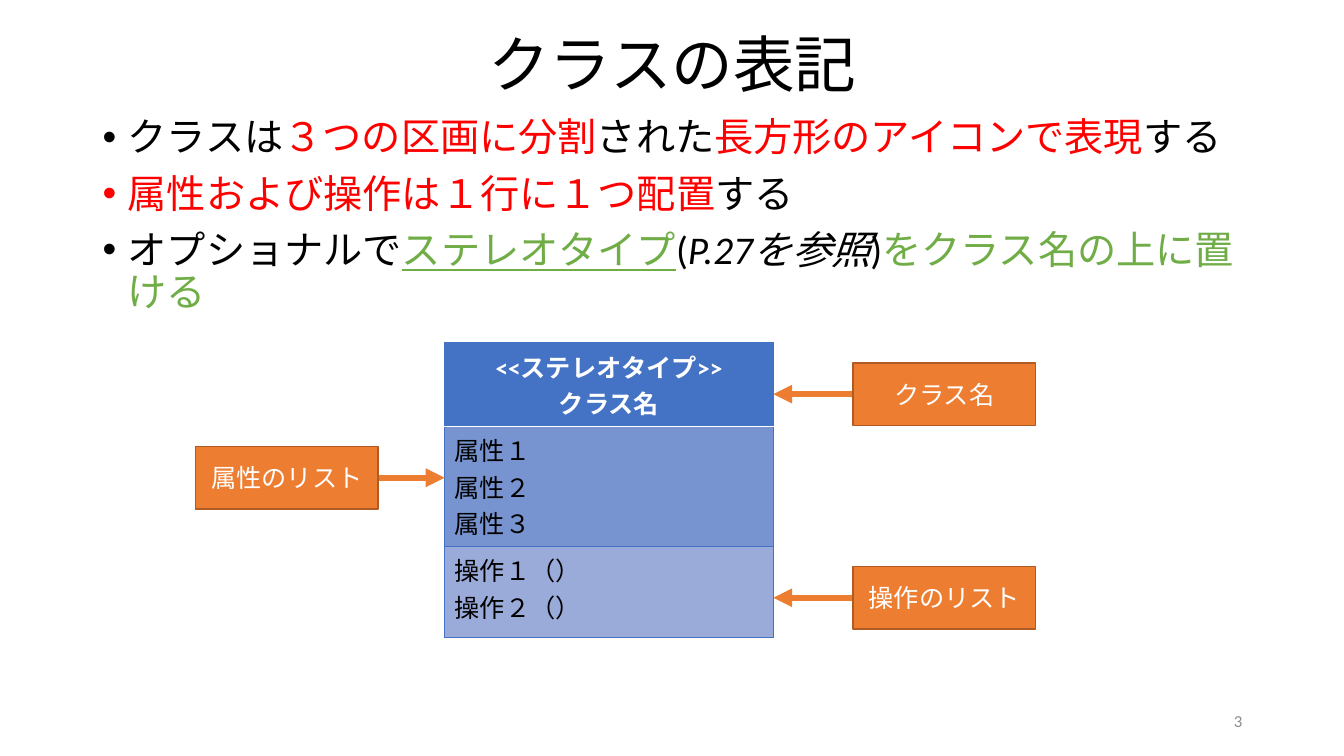
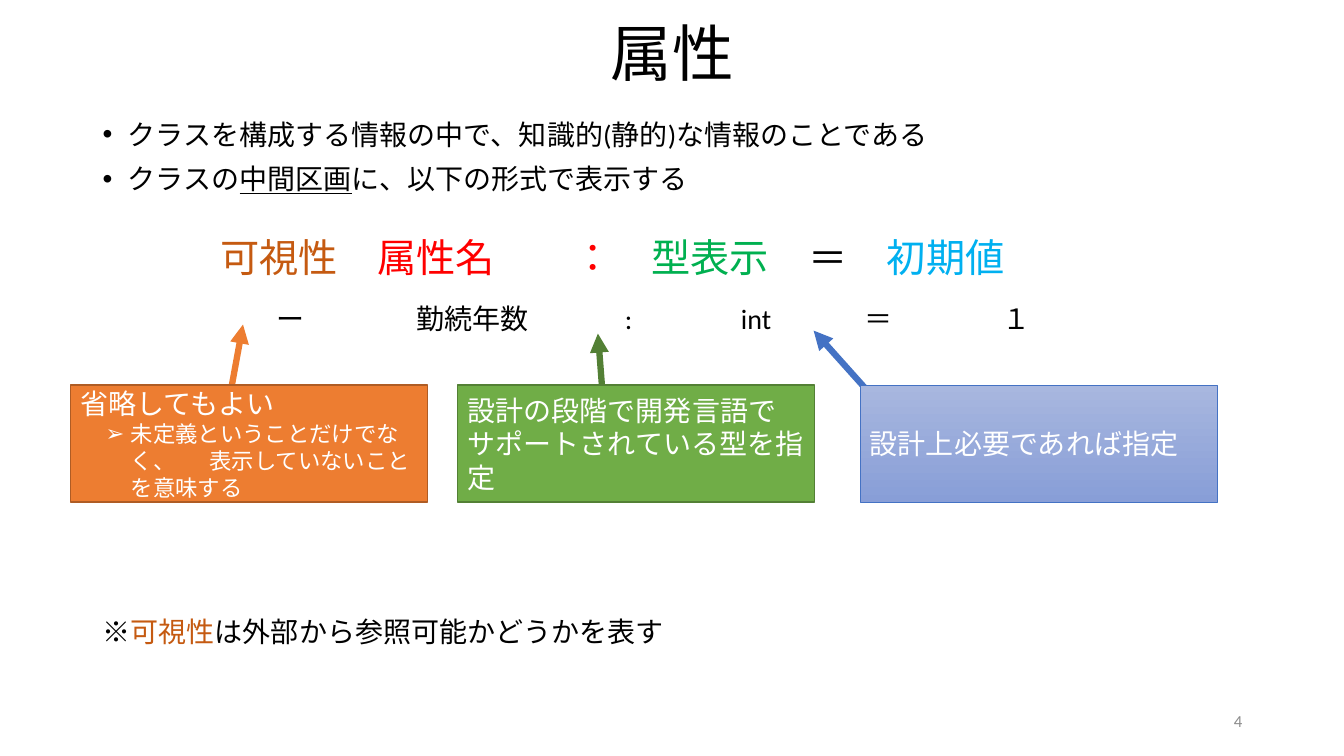
from dataclasses import dataclass

from lxml import etree
from pptx import Presentation
from pptx.dml.color import RGBColor
from pptx.enum.lang import MSO_LANGUAGE_ID
from pptx.enum.shapes import MSO_CONNECTOR, MSO_SHAPE
from pptx.enum.text import MSO_ANCHOR, PP_ALIGN
from pptx.oxml.ns import qn
from pptx.util import Inches, Pt

LEFT, CENTER, RIGHT = PP_ALIGN.LEFT, PP_ALIGN.CENTER, PP_ALIGN.RIGHT
TOP, MIDDLE = MSO_ANCHOR.TOP, MSO_ANCHOR.MIDDLE
RECTANGLE, STRAIGHT = MSO_SHAPE.RECTANGLE, MSO_CONNECTOR.STRAIGHT
JAPANESE = MSO_LANGUAGE_ID.JAPANESE
TITLE_ONLY = 5


@dataclass(frozen=True)
class Theme:
    font: str = "Calibri"
    black: str = "000000"
    white: str = "FFFFFF"
    gray: str = "8C8C8C"
    red: str = "FF0000"
    orange: str = "ED7D31"
    orange_edge: str = "AF5C24"
    brown: str = "C55A11"
    green: str = "70AD47"
    green_edge: str = "538035"
    type_green: str = "00B050"
    sky: str = "00B0F0"
    blue: str = "4472C4"
    blue_mid: str = "7894D0"
    blue_light: str = "9AABD9"
    gradient: tuple = ("A8B7DF", "889ED7")
    title: int = 44
    large: int = 28
    body: int = 20
    label: int = 18
    detail: int = 16
    number: int = 12


THEME = Theme()


@dataclass(frozen=True)
class Box:
    left: float
    top: float
    width: float
    height: float

    @property
    def right(self):
        return self.left + self.width

    @property
    def middle(self):
        return self.top + self.height / 2

    def emu(self):
        return [Inches(v) for v in (self.left, self.top, self.width, self.height)]


@dataclass(frozen=True)
class Span:
    text: str
    color: str = None
    underline: bool = None
    italic: bool = None


def rgb(value):
    return RGBColor.from_string(value)


def add_bullet(paragraph, char, indent, hanging=0.25):
    props = paragraph._p.get_or_add_pPr()
    props.set("marL", str(Inches(indent)))
    props.set("indent", str(-Inches(hanging)))
    etree.SubElement(props, qn("a:buFont"), typeface="Arial")
    etree.SubElement(props, qn("a:buChar"), char=char)


def add_tabs(paragraph, stops):
    tab_list = etree.SubElement(paragraph._p.get_or_add_pPr(), qn("a:tabLst"))
    for stop in stops:
        etree.SubElement(tab_list, qn("a:tab"), pos=str(Inches(stop)), algn="l")


def write(paragraph, content, size, color=THEME.black, align=LEFT, bold=False,
          bullet=None, indent=0.25, tabs=(), spacing=1.0, before=0):
    """Fill a paragraph from a string or a list of Span."""
    paragraph.alignment = align
    paragraph.line_spacing = spacing
    paragraph.space_before = Pt(before)
    if bullet:
        add_bullet(paragraph, bullet, indent)
    if tabs:
        add_tabs(paragraph, tabs)
    font = paragraph.font
    font.name, font.size, font.bold = THEME.font, Pt(size), bold
    font.color.rgb = rgb(color)
    font.language_id = JAPANESE
    for span in [Span(content)] if isinstance(content, str) else content:
        run = paragraph.add_run()
        run.text = span.text
        if span.color:
            run.font.color.rgb = rgb(span.color)
        if span.underline:
            run.font.underline = True
        if span.italic:
            run.font.italic = True


def paragraphs(frame, count):
    return [frame.paragraphs[0]] + [frame.add_paragraph() for _ in range(count - 1)]


def add_text(slide, box, lines, size, anchor=TOP, **style):
    frame = slide.shapes.add_textbox(*box.emu()).text_frame
    frame.word_wrap = True
    frame.vertical_anchor = anchor
    for paragraph, line in zip(paragraphs(frame, len(lines)), lines):
        write(paragraph, line, size, **style)


def add_bullets(slide, box, lines, size):
    add_text(slide, box, lines, size, bullet="•", spacing=0.9, before=10)


def add_titled_slide(prs, title, box, number):
    slide = prs.slides.add_slide(prs.slide_layouts[TITLE_ONLY])
    heading = slide.shapes.title
    heading.left, heading.top, heading.width, heading.height = box.emu()
    heading.text_frame.vertical_anchor = MIDDLE
    write(heading.text_frame.paragraphs[0], title, THEME.title, align=CENTER, spacing=0.9)
    add_text(slide, Box(9.42, 6.95, 3, 0.4), [str(number)], THEME.number,
             anchor=MIDDLE, color=THEME.gray, align=RIGHT)
    return slide


def add_arrow(slide, start, end, color):
    arrow = slide.shapes.add_connector(STRAIGHT, *map(Inches, start + end))
    arrow.line.color.rgb = rgb(color)
    arrow.line.width = Pt(4.5)
    etree.SubElement(arrow.line._get_or_add_ln(), qn("a:tailEnd"), type="triangle")
    etree.SubElement(arrow._element.spPr, qn("a:effectLst"))


def add_panel(slide, box, fill, edge, edge_width=1):
    """Add a rectangle; a tuple as fill gives a gradient from top to bottom."""
    panel = slide.shapes.add_shape(RECTANGLE, *box.emu())
    panel.shadow.inherit = False
    if isinstance(fill, tuple):
        panel.fill.gradient()
        panel.fill.gradient_angle = 270
        for stop, color in zip(panel.fill.gradient_stops, fill):
            stop.color.rgb = rgb(color)
    else:
        panel.fill.solid()
        panel.fill.fore_color.rgb = rgb(fill)
    panel.line.color.rgb = rgb(edge)
    panel.line.width = Pt(edge_width)
    panel.text_frame.word_wrap = True
    panel.text_frame.vertical_anchor = MIDDLE
    return panel.text_frame


def set_borders(cell, bottom):
    edge = (THEME.blue, 0.5)
    props = cell._tc.get_or_add_tcPr()
    sides = {"lnL": edge, "lnR": edge, "lnT": edge, "lnB": bottom or edge}
    for index, (side, (color, width)) in enumerate(sides.items()):
        line = etree.Element(qn(f"a:{side}"), w=str(Pt(width)))
        fill = etree.SubElement(line, qn("a:solidFill"))
        etree.SubElement(fill, qn("a:srgbClr"), val=color)
        props.insert(index, line)


def add_class_icon(slide, box, heights):
    compartments = [
        (["<<ステレオタイプ>>", "クラス名"], THEME.blue,
         dict(color=THEME.white, align=CENTER, bold=True), (THEME.white, 1)),
        (["属性１", "属性２", "属性３"], THEME.blue_mid, {}, None),
        (["操作１（）", "操作２（）"], THEME.blue_light, {}, None),
    ]
    table = slide.shapes.add_table(len(compartments), 1, *box.emu()).table
    for index, (lines, fill, style, bottom) in enumerate(compartments):
        table.rows[index].height = Inches(heights[index])
        cell = table.cell(index, 0)
        cell.fill.solid()
        cell.fill.fore_color.rgb = rgb(fill)
        set_borders(cell, bottom)
        for paragraph, line in zip(paragraphs(cell.text_frame, len(lines)), lines):
            write(paragraph, line, THEME.label, **style)


def add_icon_label(slide, icon, text, left, top):
    """Add a label beside the class icon with an arrow to its nearer edge."""
    box = Box(left, top, 1.81, 0.62)
    if left < icon.left:
        start, end = box.right, icon.left
    else:
        start, end = box.left, icon.right
    add_arrow(slide, (start, box.middle), (end, box.middle), THEME.orange)
    frame = add_panel(slide, box, THEME.orange, THEME.orange_edge)
    write(frame.paragraphs[0], text, THEME.label, color=THEME.white, align=CENTER)


def build_class_notation(prs):
    slide = add_titled_slide(prs, "クラスの表記", Box(0.92, 0.13, 11.5, 1.09), 3)
    add_bullets(slide, Box(0.92, 1.12, 11.5, 2.1), [
        [Span("クラスは"), Span("３つの区画に分割", THEME.red), Span("された"),
         Span("長方形のアイコンで表現", THEME.red), Span("する")],
        [Span("属性および操作は１行に１つ配置", THEME.red), Span("する")],
        [Span("オプショナルで"), Span("ステレオタイプ", THEME.green, underline=True),
         Span("("), Span("P.27を参照", italic=True), Span(")"),
         Span("をクラス名の上に置ける", THEME.green)],
    ], THEME.large)
    heights = (0.83, 1.19, 0.9)
    icon = Box(4.41, 3.4, 3.26, sum(heights))
    add_class_icon(slide, icon, heights)
    for text, left, top in [("クラス名", 8.46, 3.6), ("属性のリスト", 1.94, 4.43),
                            ("操作のリスト", 8.46, 5.62)]:
        add_icon_label(slide, icon, text, left, top)


def add_attribute_format(slide, box):
    """Show the syntax of an attribute above an example, aligned by tab stops."""
    frame = slide.shapes.add_textbox(*box.emu()).text_frame
    frame.word_wrap = True
    syntax, example = paragraphs(frame, 2)
    em = THEME.large / 72
    write(syntax, [
        Span("\t可視性", THEME.brown), Span("\t属性名\t：", THEME.red),
        Span("\t型表示", THEME.type_green), Span("\t＝"), Span("\t初期値", THEME.sky),
    ], THEME.large, tabs=[em * n for n in (3, 7, 12, 14, 18, 20)], spacing=0.9)
    write(example, "\tー\t勤続年数\t:\tint\t＝\t１", THEME.body,
          tabs=(1.72, 3.11, 5.18, 6.33, 7.56, 8.92), spacing=0.9, before=17)


def add_callout(slide, box, text, fill, edge, arrow, edge_width=1, detail=None):
    start, end, color = arrow
    add_arrow(slide, start, end, color)
    frame = add_panel(slide, box, fill, edge, edge_width)
    write(frame.paragraphs[0], text, THEME.body, color=THEME.white)
    if detail:
        write(frame.add_paragraph(), detail, THEME.detail, color=THEME.white,
              bullet="➢", indent=0.5, tabs=(1.28,))


def build_attributes(prs):
    slide = add_titled_slide(prs, "属性", Box(0.92, 0.07, 11.5, 0.98), 4)
    add_bullets(slide, Box(0.92, 1.15, 11.5, 0.9), [
        "クラスを構成する情報の中で、知識的(静的)な情報のことである",
        [Span("クラスの"), Span("中間区画", underline=True),
         Span("に、以下の形式で表示する")],
    ], THEME.body)
    add_attribute_format(slide, Box(0.92, 2.32, 11.5, 1.1))
    top, width, height = 3.82, 3.54, 1.16
    add_callout(slide, Box(0.7, top, width, height), "省略してもよい",
                THEME.orange, THEME.orange_edge,
                ((2.3, top), (2.41, 3.22), THEME.orange),
                detail="未定義ということだけでなく、\t表示していないことを意味する")
    add_callout(slide, Box(4.54, top, width, height),
                "設計の段階で開発言語で サポートされている型を指定",
                THEME.green, THEME.green_edge,
                ((5.97, top), (5.93, 3.31), THEME.green_edge))
    add_callout(slide, Box(8.53, top, width, height), "設計上必要であれば指定",
                THEME.gradient, THEME.blue,
                ((8.58, 3.85), (8.07, 3.28), THEME.blue), edge_width=0.5)
    add_text(slide, Box(0.92, 6.08, 11.5, 0.45), [
        [Span("※"), Span("可視性", THEME.brown),
         Span("は外部から参照可能かどうかを表す")],
    ], THEME.body, spacing=0.9)


def main():
    prs = Presentation()
    prs.slide_width, prs.slide_height = Inches(13.33), Inches(7.5)
    build_class_notation(prs)
    build_attributes(prs)
    prs.save("out.pptx")


if __name__ == "__main__":
    main()
